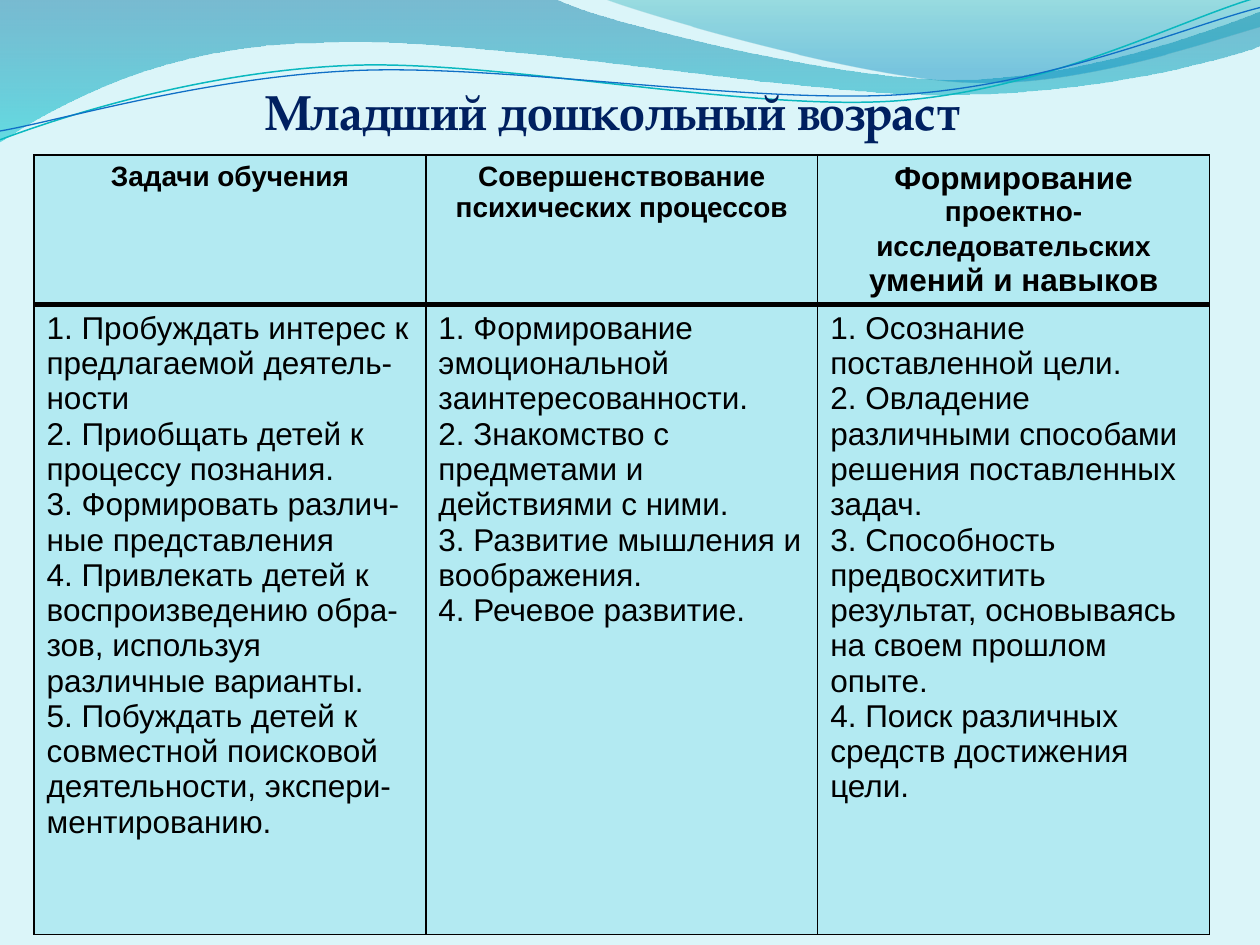
from lxml import etree
from pptx import Presentation
from pptx.dml.color import RGBColor
from pptx.enum.text import MSO_ANCHOR, PP_ALIGN
from pptx.oxml.ns import qn
from pptx.util import Inches, Pt

LEFT, MID = PP_ALIGN.LEFT, PP_ALIGN.CENTER
TOP = MSO_ANCHOR.TOP

THEME = {
    "back": "DBF5F9", "cell": "B3EAF2", "ink": "000000", "head": "002060",
    "serif": "TeX Gyre Pagella", "sans": "Arial",
    "title": 28, "big": 18, "small": 16, "thin": 1, "thick": 3,
}
BIG, SMALL = THEME["big"], THEME["small"]

TITLE = "Младший дошкольный возраст"
HEADS = [
    [("Задачи обучения", SMALL)],
    [("Совершенствование психических процессов", SMALL)],
    [("Формирование ", BIG), ("проектно-исследовательских", SMALL),
     (" умений и навыков", BIG)],
]
LISTS = [
    ["1. Пробуждать интерес к предлагаемой деятель-ности",
     "2. Приобщать детей к процессу познания.",
     "3. Формировать различ-ные представления",
     "4. Привлекать детей к воспроизведению обра-зов, используя различные варианты.",
     "5. Побуждать детей к совместной поисковой деятельности, экспери-ментированию."],
    ["1. Формирование эмоциональной заинтересованности.",
     "2. Знакомство с предметами и действиями с ними.",
     "3. Развитие мышления и воображения.",
     "4. Речевое развитие."],
    ["1. Осознание поставленной цели.",
     "2. Овладение различными способами решения поставленных задач.",
     "3. Способность предвосхитить результат, основываясь на своем прошлом опыте.",
     "4. Поиск различных средств достижения цели."],
]
ROWS = [1.09, 5]
WIDTH, HEIGHT = 3.11, 6.27

WAVES = [
    {"start": (0, -0.01), "steps": [
        [(4.4, -0.01)],
        [(4.76, 0.17), (6.64, 0.63), (7.58, 0.63)],
        [(8.53, 0.63), (9.58, 0.26), (10, 0.09)],
        [(10.01, 0.36)],
        [(9.83, 0.44), (8.7, 0.76), (7.46, 0.75)],
        [(6.22, 0.75), (3.82, 0.28), (2.57, 0.34)],
        [(1.29, 0.35), (0.46, 0.83), (-0.01, 1.13)],
        [(0, -0.01)]],
     "stops": [(0, "0074A1", 45), (1, "00C6CF", 55)]},
    {"start": (4.79, -0.01), "steps": [
        [(5.09, 0.11), (6.82, 0.62), (7.69, 0.65)],
        [(8.56, 0.69), (9.61, 0.32), (10, 0.21)],
        [(10, 0)],
        [(4.79, -0.01)]],
     "stops": [(0, "00A1A9", 30), (0.8, "008BBF", 45)]},
    {"start": (0, 1.11), "steps": [
        [(0.48, 0.93), (1.58, 0.57), (2.77, 0.52)],
        [(3.95, 0.47), (5.93, 0.89), (7.13, 0.8)],
        [(8.33, 0.71), (9.38, 0.15), (9.98, -0.02)]],
     "line": ("0AB8BF", 0.85)},
    {"start": (0, 1.04), "steps": [
        [(0.47, 0.96), (1.64, 0.61), (2.83, 0.56)],
        [(4.03, 0.51), (5.97, 0.83), (7.17, 0.75)],
        [(8.36, 0.67), (9.41, 0.21), (10, 0.06)]],
     "line": ("0F6FC6", 0.75)},
]


def rgb(code):
    return RGBColor.from_string(code)


def write(para, text, size=BIG, font=THEME["sans"], color=THEME["ink"],
          bold=False, align=LEFT):
    para.alignment = align
    run = para.add_run()
    run.text = text
    run.font.size, run.font.name, run.font.bold = Pt(size), font, bold
    run.font.color.rgb = rgb(color)


def bend(shape, steps):
    sides = list(shape._element.iter(qn("a:lnTo")))
    for step in steps:
        group, sides = sides[:len(step)], sides[len(step):]
        if len(group) == 3:
            curve = etree.Element(qn("a:cubicBezTo"))
            group[0].addprevious(curve)
            for side in group:
                curve.append(side[0])
                side.getparent().remove(side)


def draw(slide, wave):
    spots = [wave["start"]] + [spot for step in wave["steps"] for spot in step]
    spots = [(Inches(x), Inches(y)) for x, y in spots]
    pen = slide.shapes.build_freeform(*spots[0], scale=1)
    pen.add_line_segments(spots[1:], close="stops" in wave)
    shape = pen.convert_to_shape()
    bend(shape, wave["steps"])
    shape.shadow.inherit = False
    if "line" in wave:
        color, width = wave["line"]
        shape.fill.background()
        shape.line.color.rgb, shape.line.width = rgb(color), Pt(width)
        return
    shape.line.fill.background()
    shape.fill.gradient()
    shape.fill.gradient_angle = 270
    for stop, (place, color, _) in zip(shape.fill.gradient_stops, wave["stops"]):
        stop.position, stop.color.rgb = place, rgb(color)
    for node, (_, _, alpha) in zip(shape._element.iter(qn("a:srgbClr")), wave["stops"]):
        etree.SubElement(node, qn("a:alpha"), val=str(alpha * 1000))


def style(cell, top, bottom):
    cell.fill.solid()
    cell.fill.fore_color.rgb = rgb(THEME["cell"])
    cell.vertical_anchor = TOP
    props = cell._tc.get_or_add_tcPr()
    sides = [("L", THEME["thin"]), ("R", THEME["thin"]), ("T", top), ("B", bottom)]
    for i, (side, width) in enumerate(sides):
        edge = etree.Element(qn("a:ln" + side), w=str(Pt(width)))
        fill = etree.SubElement(edge, qn("a:solidFill"))
        etree.SubElement(fill, qn("a:srgbClr"), val=THEME["ink"])
        props.insert(i, edge)


def fill_table(slide):
    frame = slide.shapes.add_table(2, len(HEADS), Inches(0.27), Inches(1.23),
                                   Inches(WIDTH * len(HEADS)), Inches(HEIGHT))
    table = frame.table
    table.first_row = table.horz_banding = False
    for row, high in zip(table.rows, ROWS):
        row.height = Inches(high)
    for i, (head, items) in enumerate(zip(HEADS, LISTS)):
        table.columns[i].width = Inches(WIDTH)
        cell = table.cell(0, i)
        style(cell, THEME["thin"], THEME["thick"])
        for text, size in head:
            write(cell.text_frame.paragraphs[0], text, size=size, bold=True, align=MID)
        cell = table.cell(1, i)
        style(cell, THEME["thick"], THEME["thin"])
        body = cell.text_frame
        for n, item in enumerate(items):
            write(body.add_paragraph() if n else body.paragraphs[0], item)
    frame.height = Inches(HEIGHT)


def add_title(slide):
    title = slide.shapes.title
    title.left, title.top = Inches(2.01), Inches(0.6)
    title.width, title.height = Inches(6.26), Inches(0.57)
    title.text_frame.word_wrap = False
    title.text_frame.vertical_anchor = TOP
    write(title.text_frame.paragraphs[0], TITLE, size=THEME["title"],
          font=THEME["serif"], color=THEME["head"], bold=True)
    slide.shapes._spTree.append(title._element)


def main():
    deck = Presentation()
    deck.slide_width, deck.slide_height = Inches(10), Inches(7.5)
    slide = deck.slides.add_slide(deck.slide_layouts[5])
    slide.background.fill.solid()
    slide.background.fill.fore_color.rgb = rgb(THEME["back"])
    for wave in WAVES:
        draw(slide, wave)
    fill_table(slide)
    add_title(slide)
    deck.save("out.pptx")


if __name__ == "__main__":
    main()
